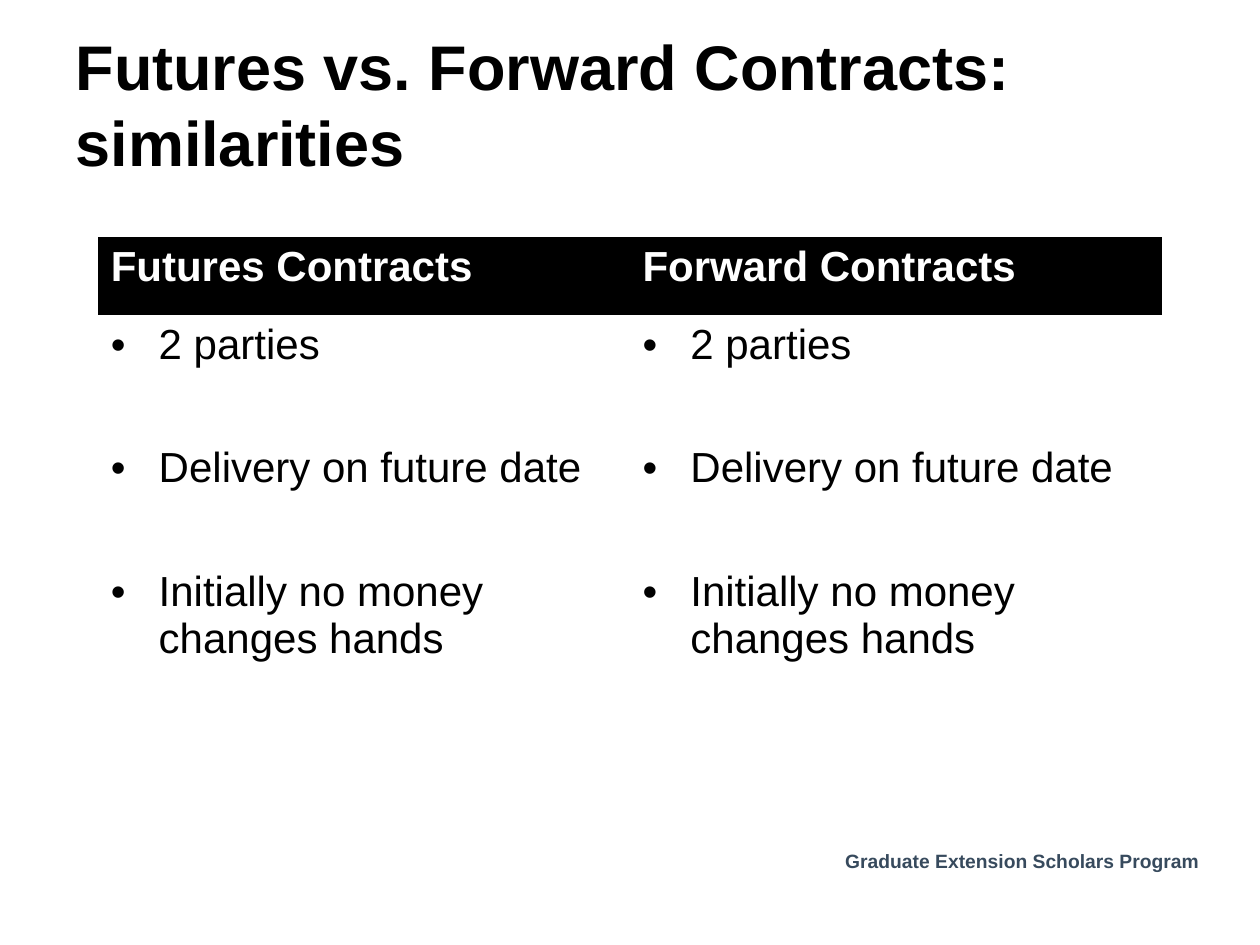
from dataclasses import dataclass

from lxml.etree import SubElement
from pptx import Presentation
from pptx.dml.color import RGBColor
from pptx.enum.text import MSO_ANCHOR, MSO_AUTO_SIZE, PP_ALIGN
from pptx.oxml.ns import qn
from pptx.util import Inches, Pt

TITLE = "Futures vs. Forward Contracts: similarities"
PROGRAM = "Graduate Extension Scholars Program"
HEADINGS = ["Futures Contracts", "Forward Contracts"]
SIMILARITIES = ["2 parties", "Delivery on future date", "Initially no money changes hands"]
ROW_HEIGHTS = [0.62, 0.98, 0.98, 1.69]
COLUMN_WIDTH = 4.22
BULLET_INDENT = Inches(0.38)
PLAIN_TABLE_STYLE = "{2D5ABB26-0587-4C30-8999-92F81FD0307C}"


@dataclass(frozen=True)
class Theme:
    font: str = "Arial"
    black: RGBColor = RGBColor(0, 0, 0)
    white: RGBColor = RGBColor(255, 255, 255)
    slate: RGBColor = RGBColor(0x37, 0x4A, 0x5D)
    title_size: int = 36
    table_size: int = 24
    program_size: int = 11


THEME = Theme()


def style(paragraph, size, color, bold):
    font = paragraph.font
    font.name, font.size, font.bold = THEME.font, Pt(size), bold
    font.color.rgb = color


def add_bullet(paragraph):
    properties = paragraph._p.get_or_add_pPr()
    properties.set("marL", str(BULLET_INDENT))
    properties.set("indent", str(-BULLET_INDENT))
    SubElement(properties, qn("a:buFont"), typeface=THEME.font)
    SubElement(properties, qn("a:buChar"), char="•")


def add_title(slide):
    title = slide.shapes.title
    title.left, title.top = Inches(0.5), Inches(0.3)
    title.width, title.height = Inches(9), Inches(1.04)
    frame = title.text_frame
    frame.text = TITLE
    frame.word_wrap = True
    frame.auto_size = MSO_AUTO_SIZE.NONE
    frame.vertical_anchor = MSO_ANCHOR.MIDDLE
    heading = frame.paragraphs[0]
    heading.alignment = PP_ALIGN.LEFT
    style(heading, THEME.title_size, THEME.black, True)


def add_comparison(slide):
    rows = [HEADINGS] + [[point] * len(HEADINGS) for point in SIMILARITIES]
    table = slide.shapes.add_table(
        len(rows), len(HEADINGS), Inches(0.78), Inches(1.88),
        Inches(COLUMN_WIDTH * len(HEADINGS)), Inches(sum(ROW_HEIGHTS))).table
    table._tbl.tblPr.find(qn("a:tableStyleId")).text = PLAIN_TABLE_STYLE
    table.horz_banding = False
    for column in table.columns:
        column.width = Inches(COLUMN_WIDTH)
    for r, (texts, height) in enumerate(zip(rows, ROW_HEIGHTS)):
        table.rows[r].height = Inches(height)
        for c, text in enumerate(texts):
            cell = table.cell(r, c)
            cell.text = text
            paragraph = cell.text_frame.paragraphs[0]
            if r == 0:
                cell.fill.solid()
                cell.fill.fore_color.rgb = THEME.black
                style(paragraph, THEME.table_size, THEME.white, True)
            else:
                cell.fill.background()
                add_bullet(paragraph)
                style(paragraph, THEME.table_size, THEME.black, False)


def add_program_name(slide):
    frame = slide.shapes.add_textbox(
        Inches(6.61), Inches(6.69), Inches(3.05), Inches(0.29)).text_frame
    frame.word_wrap = True
    frame.text = PROGRAM
    style(frame.paragraphs[0], THEME.program_size, THEME.slate, True)


def main():
    deck = Presentation()
    deck.slide_width, deck.slide_height = Inches(10), Inches(7.5)
    slide = deck.slides.add_slide(deck.slide_layouts[5])
    add_program_name(slide)
    add_title(slide)
    add_comparison(slide)
    deck.save("out.pptx")


if __name__ == "__main__":
    main()
